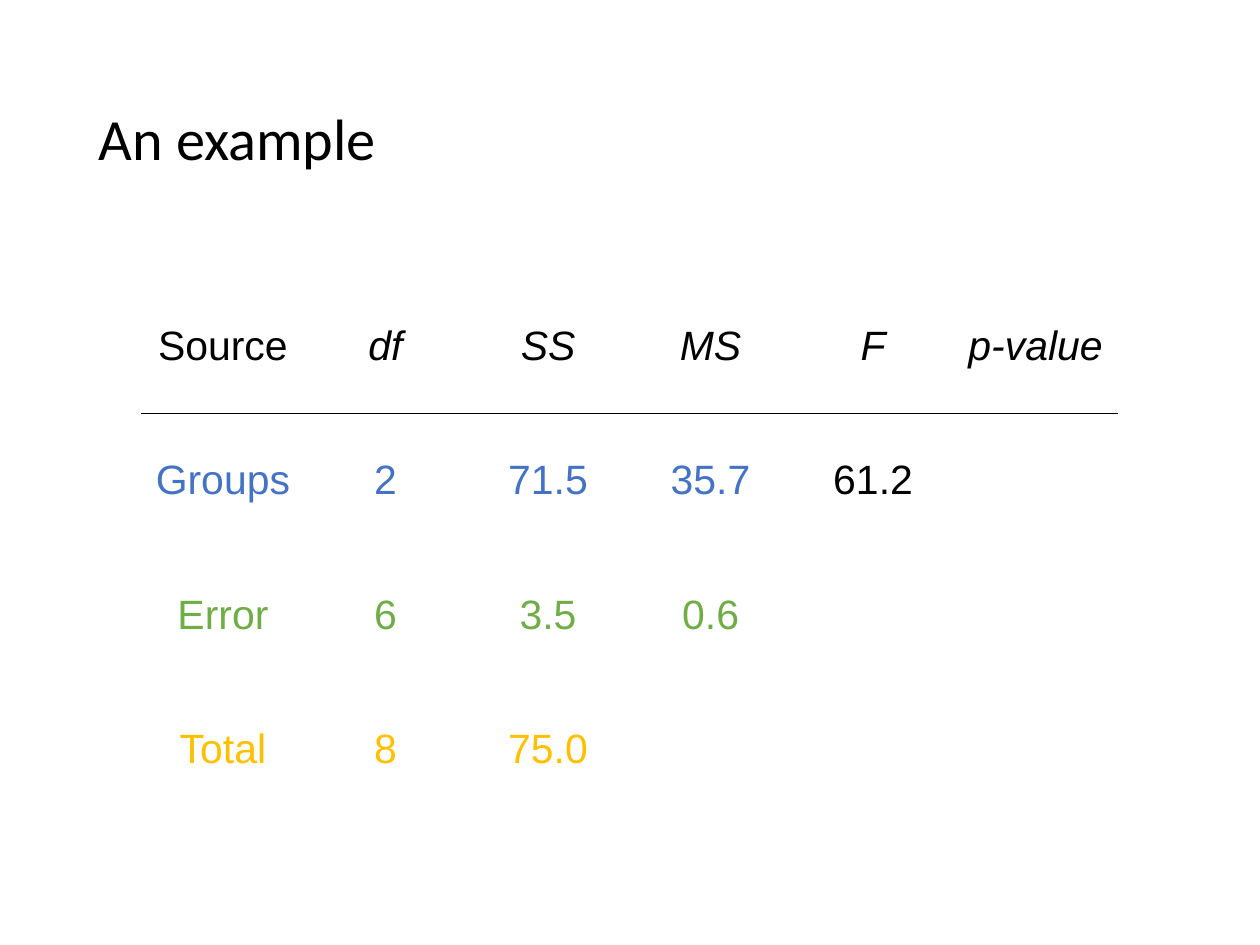
import pptx
import pptx.dml.color
import pptx.enum.text
import pptx.oxml
import pptx.oxml.ns
import pptx.util
from pptx.util import Inches

BLACK, BLUE, GREEN, GOLD = "000000", "4472C4", "70AD47", "FFC000"
ANOVA = [
    (BLACK, ["Source", "df", "SS", "MS", "F", "p-value"]),
    (BLUE, ["Groups", "2", "71.5", "35.7", "61.2", ""]),
    (GREEN, ["Error", "6", "3.5", "0.6", "", ""]),
    (GOLD, ["Total", "8", "75.0", "", "", ""]),
]
F_COLUMN = 4


def rgb(color):
    """Turn a hex string into a colour."""
    return pptx.dml.color.RGBColor.from_string(color)


def format_text(paragraph, font, size, color, italic=False):
    """Set the look of every run in a paragraph."""
    for run in paragraph.runs:
        run.font.name = font
        run.font.size = pptx.util.Pt(size)
        run.font.italic = italic
        run.font.color.rgb = rgb(color)


def add_title(slide, text):
    """Add the slide heading."""
    heading = slide.shapes.add_textbox(Inches(0.76), Inches(0.44), Inches(9.58), Inches(1.61))
    frame = heading.text_frame
    frame.word_wrap = True
    frame.vertical_anchor = pptx.enum.text.MSO_ANCHOR.MIDDLE
    frame.margin_left = frame.margin_right = Inches(0.11)
    frame.margin_top = frame.margin_bottom = Inches(0.11)
    frame.text = text
    frame.paragraphs[0].line_spacing = 0.9
    format_text(frame.paragraphs[0], "Calibri", 37, BLACK)


def add_rule(cell, side):
    """Draw a thin black border on one side of a cell."""
    border = pptx.oxml.parse_xml(
        f'<a:{side} {pptx.oxml.ns.nsdecls("a")} w="12700"><a:solidFill>'
        f'<a:srgbClr val="{BLACK}"/></a:solidFill></a:{side}>')
    cell._tc.get_or_add_tcPr().insert(0, border)


def fill_cell(cell, text, color, italic):
    """Write one centred value into a cell without a background."""
    cell.fill.background()
    cell.vertical_anchor = pptx.enum.text.MSO_ANCHOR.MIDDLE
    cell.text = text
    paragraph = cell.text_frame.paragraphs[0]
    paragraph.alignment = pptx.enum.text.PP_ALIGN.CENTER
    format_text(paragraph, "Arial", 26, color, italic)


def add_anova_table(slide):
    """Add the analysis of variance table."""
    columns = len(ANOVA[0][1])
    table = slide.shapes.add_table(len(ANOVA), columns, Inches(1.25), Inches(2.46),
                                   Inches(8.6), Inches(4.74)).table
    table.first_row = table.horz_banding = False
    for row, (color, values) in enumerate(ANOVA):
        for column, value in enumerate(values):
            cell = table.cell(row, column)
            fill_cell(cell, value, BLACK if column == F_COLUMN else color,
                      italic=row == 0 and column > 0)
    for column in range(columns):
        add_rule(table.cell(0, column), "lnB")
        add_rule(table.cell(1, column), "lnT")


def main():
    """Build and save the slide."""
    deck = pptx.Presentation()
    deck.slide_width, deck.slide_height = Inches(11.11), Inches(8.33)
    slide = deck.slides.add_slide(deck.slide_layouts[6])
    add_title(slide, "An example")
    add_anova_table(slide)
    deck.save("out.pptx")


if __name__ == "__main__":
    main()
